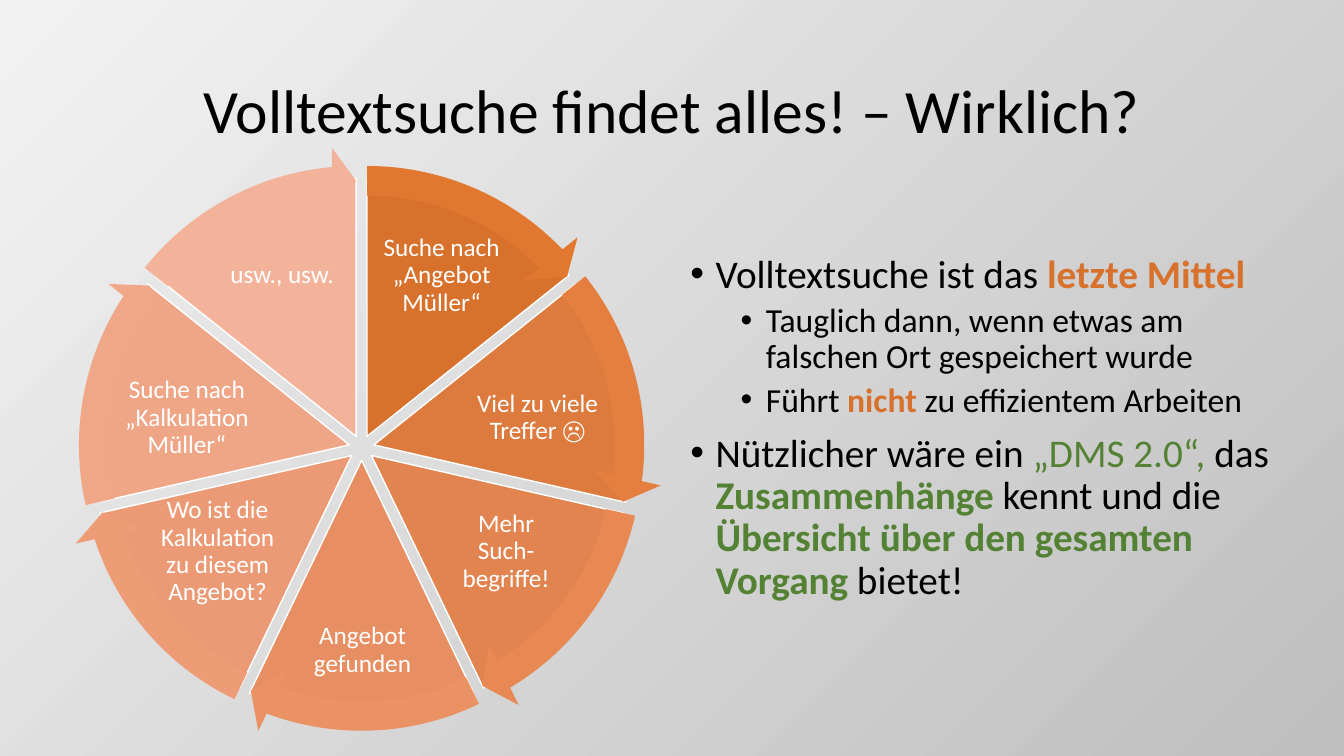
from dataclasses import dataclass
from math import cos, radians, sin

from lxml import etree
from pptx import Presentation
from pptx.dml.color import RGBColor
from pptx.enum.shapes import MSO_SHAPE
from pptx.enum.text import MSO_ANCHOR, PP_ALIGN
from pptx.oxml.ns import qn
from pptx.util import Pt

PIE = MSO_SHAPE.PIE
ARROW = MSO_SHAPE.CIRCULAR_ARROW
MIDDLE = MSO_ANCHOR.MIDDLE
CENTER = PP_ALIGN.CENTER

FONT = "Calibri"
COLORS = {
    "light": "F2F2F2",
    "dark": "BFBFBF",
    "black": "000000",
    "white": "FFFFFF",
    "orange": "D7712B",
    "green": "548235",
}

# Cycle geometry in points and degrees
CENTER_X, CENTER_Y = 258.3, 319.8
OFFSET = 9
PIE_SIZE, ARROW_SIZE = 368.6, 414
FIRST_ANGLE = 270
ARROW_SWEEP = 45.97
ARROW_HEAD_ANGLE = 5.46
ADJUSTMENT_PER_DEGREE = 0.6


@dataclass
class Step:
    text: str
    left: float
    top: float
    width: float
    height: float
    pie_color: str
    arrow_color: str


@dataclass
class Segment:
    text: str
    color: str = "black"
    bold: bool = False


@dataclass
class Bullet:
    level: int
    segments: list[Segment]


STEPS = [
    Step("Suche nach „Angebot Müller“", 271.5, 162, 88, 70, "D7712C", "E2772F"),
    Step("Viel zu viele Treffer ☹", 333.5, 268, 101, 61, "DD7B3E", "E57F40"),
    Step("Mehr Such-begriffe!", 317.5, 360, 88, 68, "E28450", "E88852"),
    Step("Angebot gefunden", 216, 434, 86, 61, "E78F62", "EB9264"),
    Step("Wo ist die Kalkulation zu diesem Angebot?", 111.5, 360, 88, 68, "EB9A75", "EE9C76"),
    Step("Suche nach „Kalkulation Müller“", 83, 268, 101, 61, "EFA687", "F0A788"),
    Step("usw., usw.", 157.5, 162, 88, 70, "F3B39B", "F3B29A"),
]
SECTOR = 360 / len(STEPS)

BULLETS = [
    Bullet(0, [Segment("Volltextsuche ist das "), Segment("letzte Mittel", "orange", True)]),
    Bullet(1, [Segment("Tauglich dann, wenn etwas am falschen Ort gespeichert wurde")]),
    Bullet(1, [Segment("Führt "), Segment("nicht", "orange", True),
               Segment(" zu effizientem Arbeiten")]),
    Bullet(0, [Segment("Nützlicher wäre ein "), Segment("„DMS 2.0“, ", "green"),
               Segment("das "), Segment("Zusammenhänge", "green", True),
               Segment(" kennt und die "),
               Segment("Übersicht über den gesamten Vorgang ", "green", True),
               Segment("bietet!")]),
]
# Per level: font size, left margin, space before
LEVEL_STYLES = [(28, 18, 10), (24, 54, 5)]


def style_run(run, size: float, color: str, bold: bool = False) -> None:
    run.font.name = FONT
    run.font.size = Pt(size)
    run.font.bold = bold
    run.font.color.rgb = RGBColor.from_string(COLORS[color])


def add_text_frame(shapes, left: float, top: float, width: float, height: float):
    box = shapes.add_textbox(Pt(left), Pt(top), Pt(width), Pt(height))
    box.text_frame.word_wrap = True
    return box.text_frame


def add_centred_text(shapes, text: str, left: float, top: float, width: float,
                     height: float, size: float, color: str):
    text_frame = add_text_frame(shapes, left, top, width, height)
    text_frame.vertical_anchor = MIDDLE
    text_frame.text = text
    paragraph = text_frame.paragraphs[0]
    paragraph.alignment = CENTER
    paragraph.line_spacing = 0.9
    style_run(paragraph.runs[0], size, color)
    return text_frame


def add_cycle_shape(shapes, kind, index: int, size: float, fill: str,
                    adjustments: list[float]):
    """Place a shape round the cycle's centre, pushed out along its sector."""
    middle = radians(FIRST_ANGLE + (index + 0.5) * SECTOR)
    left = CENTER_X + OFFSET * cos(middle) - size / 2
    top = CENTER_Y + OFFSET * sin(middle) - size / 2
    shape = shapes.add_shape(kind, Pt(left), Pt(top), Pt(size), Pt(size))
    shape.shadow.inherit = False
    shape.fill.solid()
    shape.fill.fore_color.rgb = RGBColor.from_string(fill)
    for position, value in enumerate(adjustments):
        shape.adjustments[position] = value
    return shape


def angle_value(degrees: float) -> float:
    return degrees % 360 * ADJUSTMENT_PER_DEGREE


def add_cycle(slide) -> None:
    shapes = slide.shapes.add_group_shape().shapes
    starts = [FIRST_ANGLE + index * SECTOR for index in range(len(STEPS))]

    # Sectors with labels
    for index, (step, start) in enumerate(zip(STEPS, starts)):
        pie = add_cycle_shape(shapes, PIE, index, PIE_SIZE, step.pie_color,
                              [angle_value(start), angle_value(start + SECTOR)])
        pie.line.color.rgb = RGBColor.from_string(COLORS["white"])
        pie.line.width = Pt(1)
        label = add_centred_text(shapes, step.text, step.left, step.top,
                                 step.width, step.height, 18, "white")
        label.margin_left = label.margin_right = Pt(2)
        label.margin_top = label.margin_bottom = Pt(2)

    # Arrows along the rim
    for index, (step, start) in enumerate(zip(STEPS, starts)):
        arrow = add_cycle_shape(
            shapes, ARROW, index, ARROW_SIZE, step.arrow_color,
            [5.1 / 100, angle_value(ARROW_HEAD_ANGLE),
             angle_value(start + ARROW_SWEEP), angle_value(start), 5.9 / 100])
        arrow.line.fill.background()


def add_bullets(slide) -> None:
    text_frame = add_text_frame(slide.shapes, 486, 178, 431, 309)
    for index, bullet in enumerate(BULLETS):
        paragraph = text_frame.add_paragraph() if index else text_frame.paragraphs[0]
        size, margin, space_before = LEVEL_STYLES[bullet.level]
        properties = paragraph._p.get_or_add_pPr()
        properties.set("marL", str(Pt(margin)))
        properties.set("indent", str(Pt(-18)))
        etree.SubElement(properties, qn("a:buFont")).set("typeface", "Arial")
        etree.SubElement(properties, qn("a:buChar")).set("char", "•")
        paragraph.level = bullet.level
        paragraph.line_spacing = 0.9
        if index:
            paragraph.space_before = Pt(space_before)
        for segment in bullet.segments:
            run = paragraph.add_run()
            run.text = segment.text
            style_run(run, size, segment.color, segment.bold)


def main() -> None:
    presentation = Presentation()
    presentation.slide_width = Pt(960)
    presentation.slide_height = Pt(540)
    slide = presentation.slides.add_slide(presentation.slide_layouts[6])

    # Background gradient
    background = slide.background.fill
    background.gradient()
    background.gradient_angle = 315
    for stop, name in zip(background.gradient_stops, ("light", "dark")):
        stop.color.rgb = RGBColor.from_string(COLORS[name])

    # Title, cycle and bullets
    add_centred_text(slide.shapes, "Volltextsuche findet alles! – Wirklich?",
                     66, 29, 828, 104, 44, "black")
    add_cycle(slide)
    add_bullets(slide)
    presentation.save("out.pptx")


if __name__ == "__main__":
    main()
